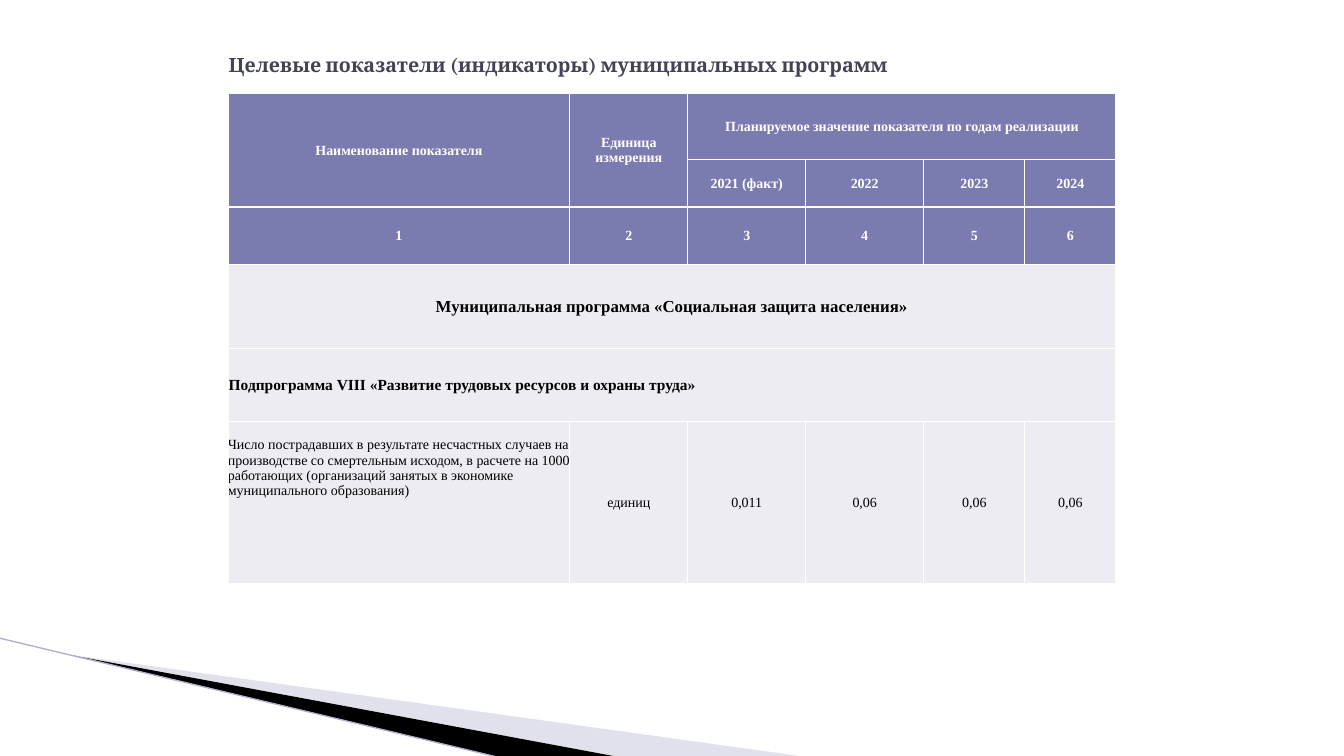
from lxml import etree
from pptx import Presentation
from pptx.dml.color import RGBColor
from pptx.enum import shapes, text
from pptx.oxml import ns
from pptx.util import Pt

WHITE = RGBColor(0xFF, 0xFF, 0xFF)
BLACK = RGBColor(0, 0, 0)
HEADER = RGBColor(0x7A, 0x7B, 0xAE)
BODY = RGBColor(0xEC, 0xEC, 0xF2)
TITLE = RGBColor(0x42, 0x44, 0x56)
WEDGE = RGBColor(0xB6, 0xB6, 0xD1)
EDGE = RGBColor(0xAF, 0xB0, 0xCC)

LEFT = text.PP_ALIGN.LEFT
CENTER = text.PP_ALIGN.CENTER
MIDDLE = text.MSO_ANCHOR.MIDDLE
TOP = text.MSO_ANCHOR.TOP

COLUMNS = [244.2, 84.3, 84.3, 84.3, 72.3, 65]
ROWS = [47.5, 34, 41, 60, 52, 116]
HEADER_ROWS = 3
CONTENT = [
    ["Наименование показателя", "Единица измерения",
     "Планируемое значение показателя по годам реализации", "", "", ""],
    ["", "", "2021 (факт)", "2022", "2023", "2024"],
    ["1", "2", "3", "4", "5", "6"],
    ["Муниципальная программа «Социальная защита населения»"] + [""] * 5,
    ["Подпрограмма VIII «Развитие трудовых ресурсов и охраны труда»"] + [""] * 5,
    ["Число пострадавших в результате несчастных случаев на производстве "
     "со смертельным исходом, в расчете на 1000 работающих (организаций "
     "занятых в экономике муниципального образования)",
     "единиц", "0,011", "0,06", "0,06", "0,06"],
]
MERGES = [(0, 0, 1, 0), (0, 1, 1, 1), (0, 2, 0, 5), (3, 0, 3, 5), (4, 0, 4, 5)]
HEADER_STYLE = dict(color=WHITE, bold=True)
ROW_STYLES = [HEADER_STYLE] * HEADER_ROWS + [
    dict(size=12, bold=True),
    dict(size=11, bold=True, align=LEFT),
    dict(),
]


def write(frame, words, size=10, font="Times New Roman", color=BLACK,
          bold=False, align=CENTER):
    para = frame.paragraphs[0]
    para.alignment = align
    span = para.add_run()
    span.text = words
    span.font.size = Pt(size)
    span.font.name = font
    span.font.bold = bold
    span.font.color.rgb = color


def add_title(page, words):
    title = page.shapes.title
    title.left, title.top, title.width, title.height = (
        Pt(156.2), Pt(21.6), Pt(648), Pt(49.7))
    title.text_frame.vertical_anchor = MIDDLE
    title.text_frame.word_wrap = True
    write(title.text_frame, words, size=14, font="Cambria", color=TITLE,
          bold=True, align=LEFT)


def add_wedge(page, points, color, opacity=100):
    builder = page.shapes.build_freeform(*points[0], scale=Pt(1))
    builder.add_line_segments(points[1:], close=True)
    wedge = builder.convert_to_shape()
    wedge.shadow.inherit = False
    wedge.fill.solid()
    wedge.fill.fore_color.rgb = color
    wedge.line.fill.background()
    if opacity < 100:
        tint = wedge.fill._xPr.find(".//" + ns.qn("a:srgbClr"))
        etree.SubElement(tint, ns.qn("a:alpha"), val=str(opacity * 1000))


def add_edge(page, start, end):
    edge = page.shapes.add_connector(
        shapes.MSO_CONNECTOR.STRAIGHT, *map(Pt, start + end))
    edge.line.color.rgb = EDGE
    edge.line.width = Pt(0.95)
    etree.SubElement(edge._element.spPr, ns.qn("a:effectLst"))


def set_borders(cell):
    properties = cell._tc.get_or_add_tcPr()
    for index, side in enumerate(("lnL", "lnR", "lnT", "lnB")):
        border = etree.Element(ns.qn("a:" + side), w=str(Pt(1)))
        fill = etree.SubElement(border, ns.qn("a:solidFill"))
        etree.SubElement(fill, ns.qn("a:srgbClr"), val=str(WHITE))
        properties.insert(index, border)


def format_cell(cell, color):
    cell.fill.solid()
    cell.fill.fore_color.rgb = color
    cell.vertical_anchor = MIDDLE
    cell.margin_left = cell.margin_right = cell.margin_top = Pt(0.6)
    cell.margin_bottom = Pt(0)
    set_borders(cell)


def add_indicators(page):
    table = page.shapes.add_table(
        len(ROWS), len(COLUMNS), Pt(162.8), Pt(66.4),
        Pt(sum(COLUMNS)), Pt(sum(ROWS))).table
    for column, width in zip(table.columns, COLUMNS):
        column.width = Pt(width)
    for row, height in zip(table.rows, ROWS):
        row.height = Pt(height)
    for top, left, bottom, right in MERGES:
        table.cell(top, left).merge(table.cell(bottom, right))
    for r, (line, style) in enumerate(zip(CONTENT, ROW_STYLES)):
        for c, words in enumerate(line):
            cell = table.cell(r, c)
            format_cell(cell, HEADER if r < HEADER_ROWS else BODY)
            if words:
                write(cell.text_frame, words, **style)
    name = table.cell(len(ROWS) - 1, 0)
    name.vertical_anchor = TOP
    name.margin_left = name.margin_right = Pt(0)
    name.margin_top = Pt(11.5)
    name.text_frame.paragraphs[0].alignment = LEFT


def main():
    deck = Presentation()
    deck.slide_width, deck.slide_height = Pt(960), Pt(540)
    page = deck.slides.add_slide(deck.slide_layouts[5])
    add_wedge(page, [(52.5, 468.4), (571, 540.5), (437.8, 540.5)], WEDGE, opacity=40)
    add_wedge(page, [(51.3, 467.6), (438.4, 540.5), (357.2, 541), (52, 468)], BLACK)
    add_edge(page, (-0.5, 455.8), (356.4, 541))
    add_title(page, "Целевые показатели (индикаторы) муниципальных программ")
    add_indicators(page)
    deck.save("out.pptx")


if __name__ == "__main__":
    main()
